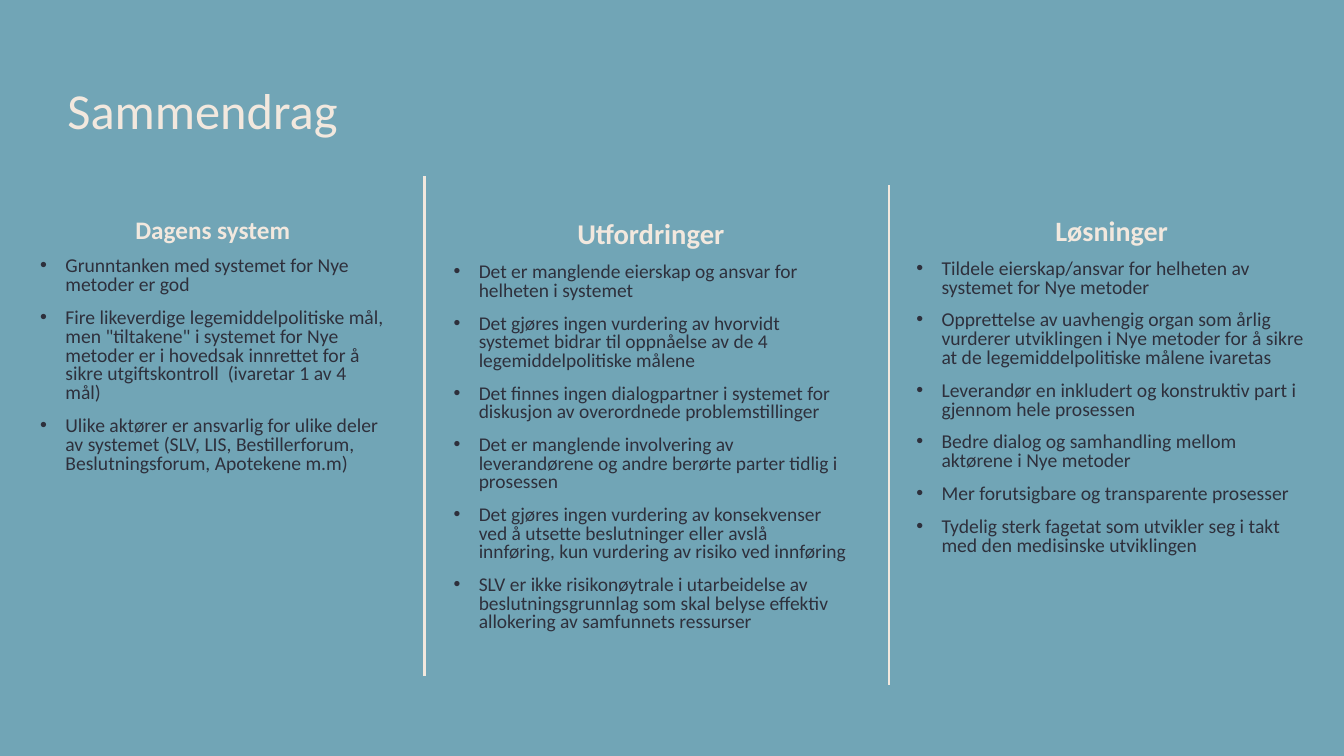
from dataclasses import dataclass

from lxml.etree import SubElement
from pptx import Presentation
from pptx.dml.color import RGBColor
from pptx.enum.shapes import MSO_CONNECTOR
from pptx.enum.text import MSO_ANCHOR, PP_ALIGN
from pptx.oxml.ns import qn
from pptx.util import Inches, Pt


@dataclass(frozen=True)
class Theme:
    font: str = "Calibri"
    background: RGBColor = RGBColor(0x71, 0xA5, 0xB6)
    light: RGBColor = RGBColor(0xF2, 0xE8, 0xDE)
    dark: RGBColor = RGBColor(0x2E, 0x30, 0x3C)
    title_size: float = 36
    rule_width: float = 1.5


THEME = Theme()
COLUMN_TOP = 2.16
RULE_HEIGHT = 4.96
RULES = [(4.21, 1.75), (8.82, 1.84)]


@dataclass(frozen=True)
class Column:
    left: float
    width: float
    height: float
    heading: str
    heading_size: float
    heading_spacing: float
    body_size: float
    points: tuple


COLUMNS = [
    Column(0.3, 3.62, 4.6, "Dagens system", 18, 0.7, 14, (
        "Grunntanken med systemet for Nye metoder er god",
        "Fire likeverdige legemiddelpolitiske mål, men \"tiltakene\" i systemet "
        "for Nye metoder er i hovedsak innrettet for å sikre "
        "utgiftskontroll  (ivaretar 1 av 4 mål)",
        "Ulike aktører er ansvarlig for ulike deler av systemet (SLV, LIS, "
        "Bestillerforum, Beslutningsforum, Apotekene m.m)",
    )),
    Column(4.4, 4.11, 4.76, "Utfordringer", 20.4, 0.8, 13.9, (
        "Det er manglende eierskap og ansvar for helheten i systemet",
        "Det gjøres ingen vurdering av hvorvidt systemet bidrar til "
        "oppnåelse av de 4 legemiddelpolitiske målene",
        "Det finnes ingen dialogpartner i systemet for diskusjon av "
        "overordnede problemstillinger",
        "Det er manglende involvering av leverandørene og andre berørte "
        "parter tidlig i prosessen",
        "Det gjøres ingen vurdering av konsekvenser ved å utsette "
        "beslutninger eller avslå innføring, kun vurdering av risiko ved "
        "innføring",
        "SLV er ikke risikonøytrale i utarbeidelse av beslutningsgrunnlag "
        "som skal belyse effektiv allokering av samfunnets ressurser",
    )),
    Column(8.99, 4.07, 4.76, "Løsninger", 20, 0.7, 14, (
        "Tildele eierskap/ansvar for helheten av systemet for Nye metoder",
        "Opprettelse av uavhengig organ som årlig vurderer utviklingen i Nye "
        "metoder for å sikre at de legemiddelpolitiske målene ivaretas",
        "Leverandør en inkludert og konstruktiv part i gjennom hele prosessen",
        "Bedre dialog og samhandling mellom aktørene i Nye metoder",
        "Mer forutsigbare og transparente prosesser",
        "Tydelig sterk fagetat som utvikler seg i takt med den medisinske "
        "utviklingen",
    )),
]


def add_text_box(s, left, top, width, height):
    box = s.shapes.add_textbox(
        Inches(left), Inches(top), Inches(width), Inches(height))
    tf = box.text_frame
    tf.word_wrap = True
    return tf


def write(p, text, size, color, spacing, bold=False):
    p.text = text
    p.line_spacing = spacing
    for r in p.runs:
        r.font.name = THEME.font
        r.font.size = Pt(size)
        r.font.bold = bold
        r.font.color.rgb = color


def add_bullet(p):
    pPr = p._p.get_or_add_pPr()
    pPr.set("marL", str(Inches(0.25)))
    pPr.set("indent", str(Inches(-0.25)))
    SubElement(pPr, qn("a:buFont"), typeface="Arial")
    SubElement(pPr, qn("a:buChar"), char="•")


def add_title(s, text):
    tf = add_text_box(s, 0.57, 0.4, 11.85, 1.45)
    tf.vertical_anchor = MSO_ANCHOR.MIDDLE
    write(tf.paragraphs[0], text, THEME.title_size, THEME.light, 0.9)


def add_column(s, column):
    tf = add_text_box(s, column.left, COLUMN_TOP, column.width, column.height)
    p = tf.paragraphs[0]
    p.alignment = PP_ALIGN.CENTER
    write(p, column.heading, column.heading_size, THEME.light,
          column.heading_spacing, bold=True)
    for point in column.points:
        p = tf.add_paragraph()
        add_bullet(p)
        p.space_before = Pt(10)
        write(p, point, column.body_size, THEME.dark, 0.8)


def add_rule(s, x, top):
    """Draw a vertical divider between two columns."""
    line = s.shapes.add_connector(
        MSO_CONNECTOR.STRAIGHT,
        Inches(x), Inches(top), Inches(x), Inches(top + RULE_HEIGHT))
    line.line.color.rgb = THEME.light
    line.line.width = Pt(THEME.rule_width)
    SubElement(line._element.spPr, qn("a:effectLst"))


def main():
    prs = Presentation()
    prs.slide_width, prs.slide_height = Inches(13.33), Inches(7.5)
    s = prs.slides.add_slide(prs.slide_layouts[6])
    s.background.fill.solid()
    s.background.fill.fore_color.rgb = THEME.background
    add_title(s, "Sammendrag")
    for column in COLUMNS:
        add_column(s, column)
    for x, top in RULES:
        add_rule(s, x, top)
    prs.save("out.pptx")


if __name__ == "__main__":
    main()
